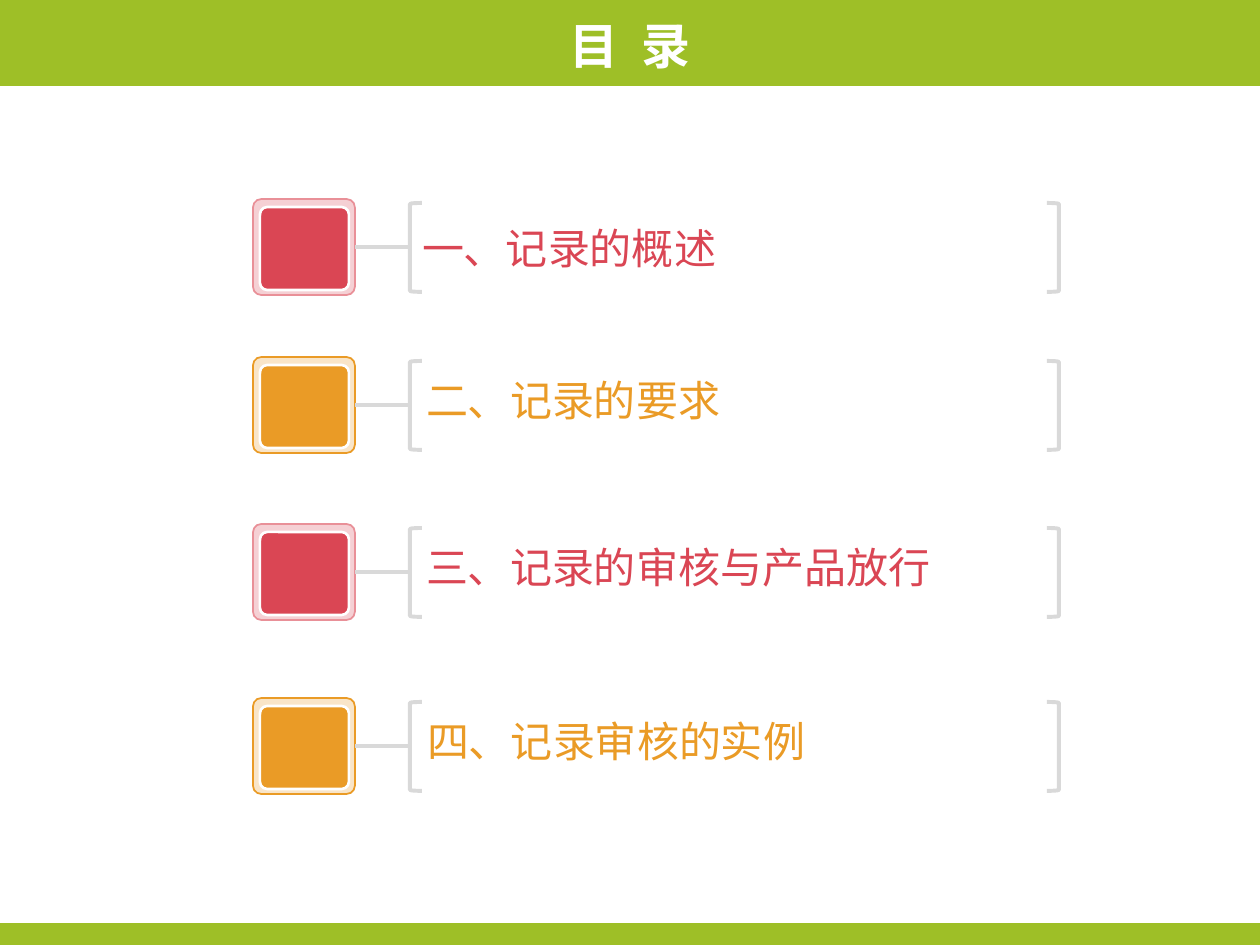
from lxml import etree
from pptx import Presentation
from pptx.dml.color import RGBColor
from pptx.enum.shapes import MSO_CONNECTOR, MSO_SHAPE
from pptx.enum.text import MSO_ANCHOR, PP_ALIGN
from pptx.oxml.ns import qn
from pptx.util import Pt

RECTANGLE = MSO_SHAPE.RECTANGLE
ROUNDED = MSO_SHAPE.ROUNDED_RECTANGLE
BRACKET = MSO_SHAPE.RIGHT_BRACKET
STRAIGHT = MSO_CONNECTOR.STRAIGHT
CENTER = PP_ALIGN.CENTER
MIDDLE = MSO_ANCHOR.MIDDLE

PX = 914400 / 126
RIGHT_SIDE = 3
TITLE_ONLY = 5
GREEN, RED, PINK, ORANGE = "9EBF27", "DA4654", "E99098", "EA9B26"
GRAY, WHITE = "D9D9D9", "FFFFFF"
CHINESE_FONT = "Noto Sans CJK SC"

# text, colour, frame line, row top, text left, text offset, text height
ENTRIES = [
    ("一、记录的概述", RED, PINK, 199, 422, 8, 83),
    ("二、记录的要求", ORANGE, ORANGE, 357, 426, 2, 88),
    ("三、记录的审核与产品放行", RED, PINK, 524, 426, 2, 88),
    ("四、记录审核的实例", ORANGE, ORANGE, 698, 427, 2, 88),
]


def px(*lengths):
    return [round(length * PX) for length in lengths]


def color(hex_string):
    return RGBColor.from_string(hex_string)


class Contents:
    def __init__(self, slide):
        self.slide = slide
        self.shapes = slide.shapes

    def start_group(self):
        self.shapes = self.slide.shapes.add_group_shape().shapes

    def font(self, paragraph, name, size, fill, bold=False):
        font = paragraph.font
        font.name, font.size, font.bold = name, Pt(size), bold
        font.color.rgb = color(fill)
        latin = font._element.find(qn("a:latin"))
        east_asian = etree.Element(qn("a:ea"), typeface=CHINESE_FONT)
        latin.addnext(east_asian)

    def shape(self, kind, box, fill=None, line=None, width=1, alpha=None):
        shape = self.shapes.add_shape(kind, *px(*box))
        shape.shadow.inherit = False
        if fill:
            shape.fill.solid()
            shape.fill.fore_color.rgb = color(fill)
        else:
            shape.fill.background()
        if alpha:
            fill_color = shape._element.spPr.find(qn("a:solidFill"))[0]
            etree.SubElement(fill_color, qn("a:alpha"), val=str(alpha * 1000))
        if line:
            shape.line.color.rgb = color(line)
            shape.line.width = Pt(width)
        else:
            shape.line.fill.background()
        if kind == ROUNDED:
            shape.adjustments[0] = 0.087
        return shape

    def bar(self, top, height):
        bar = self.shape(RECTANGLE, (0, top, 1260, height), GREEN)
        # Bars lie behind the title
        self.slide.shapes._spTree.insert(2, bar._element)

    def title(self, text):
        title = self.slide.shapes.title
        title.left, title.top, title.width, title.height = px(0, 0, 1260, 89)
        frame = title.text_frame
        frame.text = text
        frame.vertical_anchor = MIDDLE
        paragraph = frame.paragraphs[0]
        paragraph.alignment = CENTER
        self.font(paragraph, CHINESE_FONT, 28, WHITE, True)

    def bracket(self, left, top, flipped=False):
        bracket = self.shape(BRACKET, (left, top, 12, 89), None, GRAY, 2.25)
        if flipped:
            bracket._element.spPr.find(qn("a:xfrm")).set("flipH", "1")

    def connector(self, frame, right, middle):
        connector = self.shapes.add_connector(
            STRAIGHT, *px(355, middle, right, middle))
        connector.begin_connect(frame, RIGHT_SIDE)
        connector.line.color.rgb = color(GRAY)
        connector.line.width = Pt(2.25)
        etree.SubElement(connector._element.spPr, qn("a:effectLst"))

    def text(self, text, box, fill):
        frame = self.shapes.add_textbox(*px(*box)).text_frame
        frame.word_wrap = True
        frame.margin_left = frame.margin_right = 0
        frame.margin_top = frame.margin_bottom = 0
        frame.text = text
        paragraph = frame.paragraphs[0]
        paragraph.line_spacing = 1.3
        paragraph.space_after = Pt(6)
        self.font(paragraph, "Arial", 24, fill)

    def entry(self, text, fill, edge, top, text_left, offset, height):
        self.start_group()
        frame = self.shape(ROUNDED, (253, top, 102, 96), fill, edge, 1, 25)
        self.shape(ROUNDED, (260, top + 8, 89, 83), fill, WHITE, 1.5)
        self.bracket(410, top + 4, flipped=True)
        self.connector(frame, 409, top + 48)
        self.bracket(1047, top + 4)
        self.text(text, (text_left, top + offset, 609, height), fill)


def main():
    presentation = Presentation()
    presentation.slide_width, presentation.slide_height = px(1260, 945)
    layout = presentation.slide_layouts[TITLE_ONLY]
    contents = Contents(presentation.slides.add_slide(layout))

    # Title and green bars
    contents.bar(923, 22)
    contents.bar(0, 86)
    contents.title("目  录")

    # Entries of the table of contents
    for entry in ENTRIES:
        contents.entry(*entry)

    presentation.save("out.pptx")


if __name__ == "__main__":
    main()
